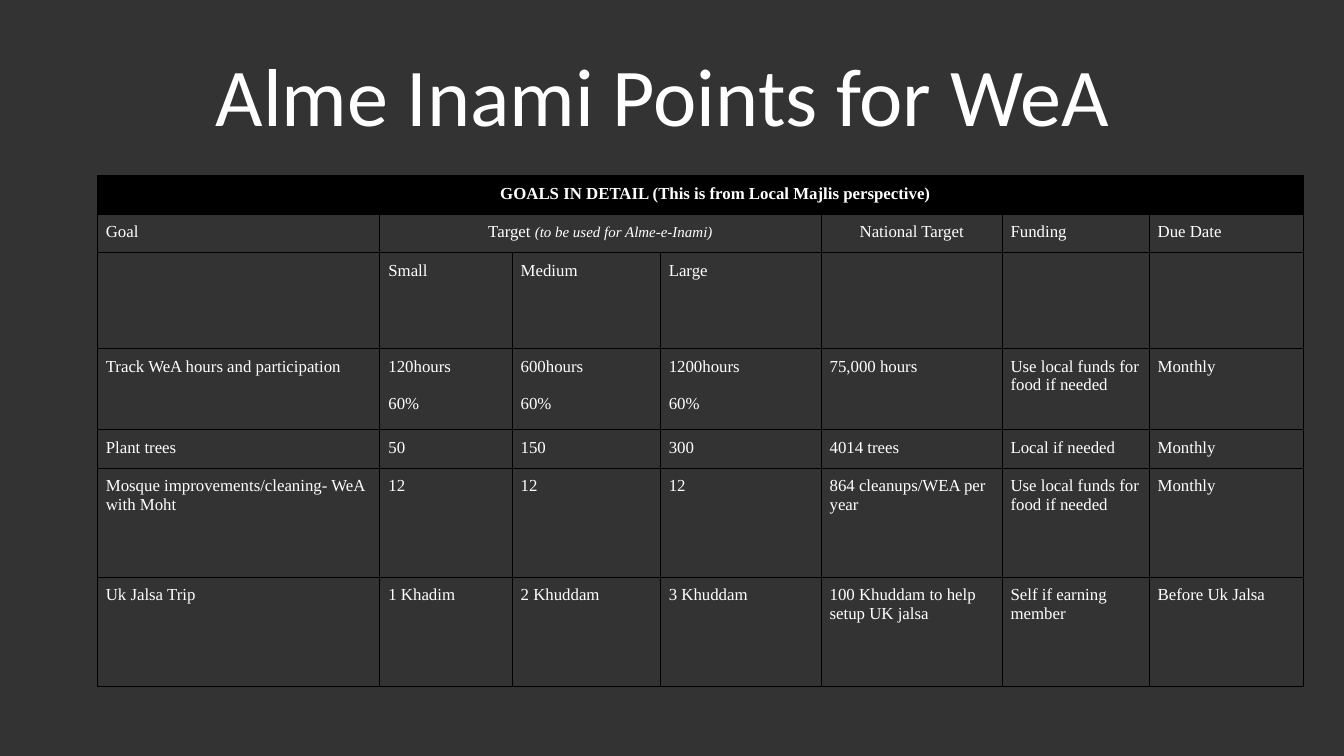
from lxml import etree
from pptx import Presentation
from pptx import util as u
from pptx.dml.color import RGBColor
from pptx.enum import text
from pptx.oxml import ns

CHARCOAL = RGBColor(0x33, 0x33, 0x33)
BLACK = RGBColor(0, 0, 0)
WHITE = RGBColor(0xFF, 0xFF, 0xFF)

COLUMN_WIDTHS = [5.34, 2.5, 2.8, 3.04, 3.42, 2.78, 2.91]
ROW_HEIGHTS = [0.73, 0.73, 1.81, 1.53, 0.73, 2.06, 2.07]
HEADINGS = ["Goal", "Target ", "", "", "National Target", "Funding", "Due Date"]
ROWS = [
    ["GOALS IN DETAIL (This is from Local Majlis perspective)"] + [""] * 6,
    HEADINGS,
    ["", "Small", "Medium", "Large", "", "", ""],
    ["Track WeA hours and participation", "120hours\n60%", "600hours\n60%",
     "1200hours\n60%", "75,000 hours", "Use local funds for food if needed", "Monthly"],
    ["Plant trees", "50", "150", "300", "4014 trees", "Local if needed", "Monthly"],
    ["Mosque improvements/cleaning- WeA with Moht", "12", "12", "12",
     "864 cleanups/WEA per year", "Use local funds for food if needed", "Monthly"],
    ["Uk Jalsa Trip", "1 Khadim", "2 Khuddam", "3 Khuddam",
     "100 Khuddam to help setup UK jalsa", "Self if earning member", "Before Uk Jalsa"],
]
CENTERED = [(0, 0), (1, 1), (1, 4)]


def apply(target, values):
    for name, value in values.items():
        setattr(target, name, value)


class GoalsPage:
    TITLE_FONT = {"name": "Calibri", "size": u.Pt(44), "bold": False}
    CELL_FONT = {"name": "Times New Roman", "size": u.Pt(9), "bold": False}
    MARGINS = {f"margin_{side}": u.Cm(0.16) for side in ("left", "right", "top", "bottom")}

    def __init__(self, deck):
        self.page = deck.slides.add_slide(deck.slide_layouts[5])
        fill = self.page.background.fill
        fill.solid()
        fill.fore_color.rgb = CHARCOAL

    def add_span(self, para, words, font):
        span = para.add_run()
        span.text = words
        apply(span.font, font)
        span.font.color.rgb = WHITE

    def add_title(self, words, left, top, width, height):
        box = self.page.shapes.title
        apply(box, {"left": u.Cm(left), "top": u.Cm(top),
                    "width": u.Cm(width), "height": u.Cm(height)})
        apply(box.text_frame, {"vertical_anchor": text.MSO_ANCHOR.MIDDLE, "word_wrap": True})
        para = box.text_frame.paragraphs[0]
        para.alignment = text.PP_ALIGN.CENTER
        self.add_span(para, words, self.TITLE_FONT)

    def add_borders(self, cell):
        properties = cell._tc.get_or_add_tcPr()
        for index, side in enumerate(("lnL", "lnR", "lnT", "lnB")):
            line = etree.Element(ns.qn(f"a:{side}"), w=str(u.Pt(0.5)))
            fill = etree.SubElement(line, ns.qn("a:solidFill"))
            etree.SubElement(fill, ns.qn("a:srgbClr"), val=str(BLACK))
            properties.insert(index, line)

    def fill_cell(self, cell, words, centered):
        apply(cell, self.MARGINS)
        cell.fill.background()
        self.add_borders(cell)
        if not words:
            return
        for number, line in enumerate(words.split("\n")):
            frame = cell.text_frame
            para = frame.add_paragraph() if number else frame.paragraphs[0]
            para.space_after = u.Pt(10)
            para.alignment = text.PP_ALIGN.CENTER if centered else text.PP_ALIGN.LEFT
            self.add_span(para, line, self.CELL_FONT)

    def add_table(self, rows, left, top):
        frame = self.page.shapes.add_table(
            len(rows), len(COLUMN_WIDTHS), u.Cm(left), u.Cm(top),
            u.Cm(sum(COLUMN_WIDTHS)), u.Cm(sum(ROW_HEIGHTS)))
        table = frame.table
        apply(table, {"first_row": False, "horz_banding": False})
        for column, width in zip(table.columns, COLUMN_WIDTHS):
            column.width = u.Cm(width)
        for row, height in zip(table.rows, ROW_HEIGHTS):
            row.height = u.Cm(height)
        for r, row in enumerate(rows):
            for c, words in enumerate(row):
                self.fill_cell(table.cell(r, c), words, (r, c) in CENTERED)
        return table

    def style_banner(self, cell):
        cell.fill.solid()
        cell.fill.fore_color.rgb = BLACK
        cell.margin_left = u.Cm(0.72)
        cell.text_frame.paragraphs[0].runs[0].font.bold = True

    def add_note(self, cell, words):
        font = {**self.CELL_FONT, "size": u.Pt(8), "italic": True}
        self.add_span(cell.text_frame.paragraphs[0], words, font)


def main():
    deck = Presentation()
    apply(deck, {"slide_width": u.Cm(25.4), "slide_height": u.Cm(14.29)})
    goals = GoalsPage(deck)
    goals.add_title("Alme Inami Points for WeA ", 1.27, 0.58, 22.86, 2.39)
    table = goals.add_table(ROWS, 1.84, 3.32)
    banner, target = table.cell(0, 0), table.cell(1, 1)
    banner.merge(table.cell(0, 6))
    target.merge(table.cell(1, 3))
    goals.style_banner(banner)
    goals.add_note(target, "(to be used for Alme-e-Inami)")
    deck.save("out.pptx")


if __name__ == "__main__":
    main()
